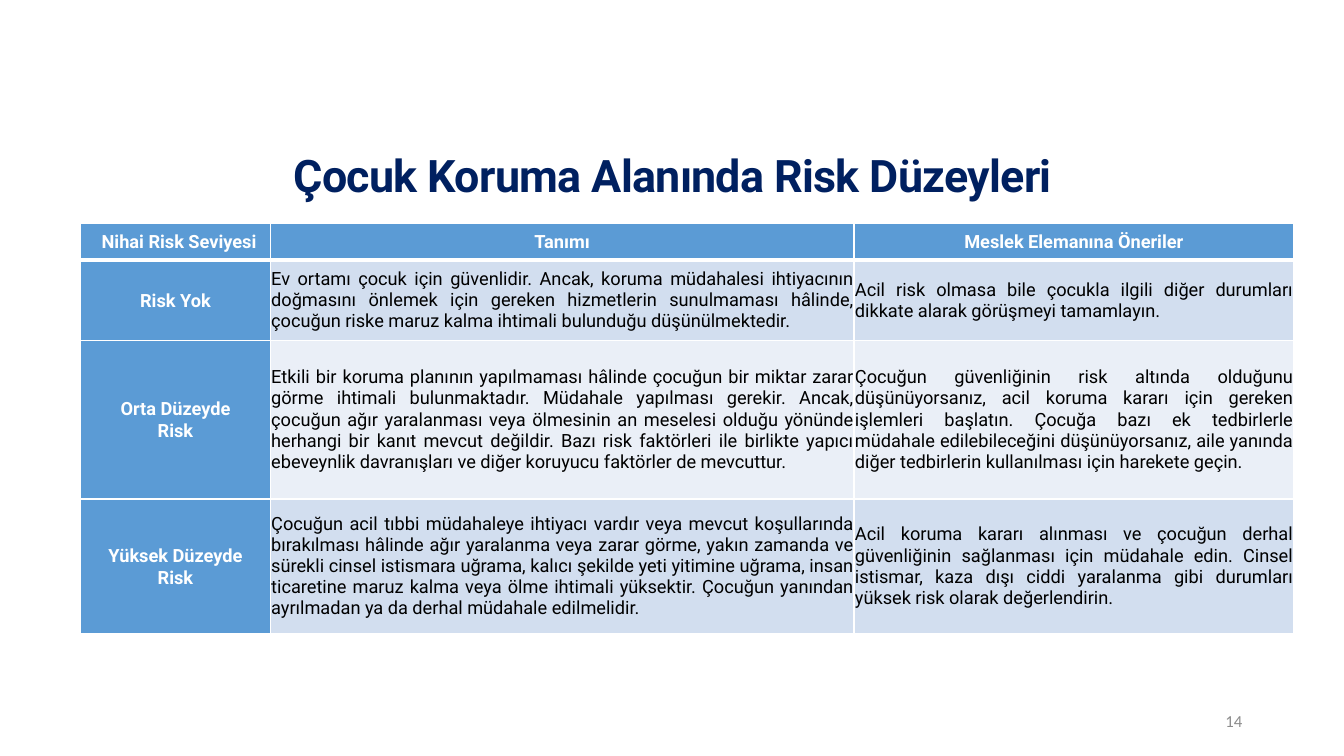
from dataclasses import dataclass
from lxml.etree import SubElement
from pptx import Presentation
from pptx.dml.color import RGBColor
from pptx.enum.text import MSO_ANCHOR, PP_ALIGN
from pptx.oxml.ns import qn
from pptx.util import Inches, Pt

# Content
TITLE = "Çocuk Koruma Alanında Risk Düzeyleri"
PAGE_NUMBER = "14"
HEADERS = ("Nihai Risk Seviyesi", "Tanımı", "Meslek Elemanına Öneriler")
RISK_LEVELS = [
    ("Risk Yok",
     "Ev ortamı çocuk için güvenlidir. Ancak, koruma müdahalesi ihtiyacının doğmasını "
     "önlemek için gereken hizmetlerin sunulmaması hâlinde, çocuğun riske maruz kalma "
     "ihtimali bulunduğu düşünülmektedir.",
     "Acil risk olmasa bile çocukla ilgili diğer durumları dikkate alarak görüşmeyi "
     "tamamlayın."),
    ("Orta Düzeyde\nRisk",
     "Etkili bir koruma planının yapılmaması hâlinde çocuğun bir miktar zarar görme "
     "ihtimali bulunmaktadır. Müdahale yapılması gerekir. Ancak, çocuğun ağır "
     "yaralanması veya ölmesinin an meselesi olduğu yönünde herhangi bir kanıt mevcut "
     "değildir. Bazı risk faktörleri ile birlikte yapıcı ebeveynlik davranışları ve "
     "diğer koruyucu faktörler de mevcuttur.",
     "Çocuğun güvenliğinin risk altında olduğunu düşünüyorsanız, acil koruma kararı "
     "için gereken işlemleri başlatın. Çocuğa bazı ek tedbirlerle müdahale "
     "edilebileceğini düşünüyorsanız, aile yanında diğer tedbirlerin kullanılması için "
     "harekete geçin."),
    ("Yüksek Düzeyde\nRisk",
     "Çocuğun acil tıbbi müdahaleye ihtiyacı vardır veya mevcut koşullarında "
     "bırakılması hâlinde ağır yaralanma veya zarar görme, yakın zamanda ve sürekli "
     "cinsel istismara uğrama, kalıcı şekilde yeti yitimine uğrama, insan ticaretine "
     "maruz kalma veya ölme ihtimali yüksektir. Çocuğun yanından ayrılmadan ya da "
     "derhal müdahale edilmelidir.",
     "Acil koruma kararı alınması ve çocuğun derhal güvenliğinin sağlanması için "
     "müdahale edin. Cinsel istismar, kaza dışı ciddi yaralanma gibi durumları yüksek "
     "risk olarak değerlendirin."),
]
COLUMN_WIDTHS = (1.88, 5.79, 4.36)
ROW_HEIGHTS = (0.36, 0.8, 1.57, 1.34)


@dataclass(frozen=True)
class Theme:
    title: str = "002060"
    label_fill: str = "5B9BD5"
    band_fills: tuple = ("D2DEEF", "EAEFF7")
    white: str = "FFFFFF"
    black: str = "000000"
    grey: str = "8C8C8C"
    font: str = "Roboto"
    number_font: str = "Calibri"
    title_size: int = 32
    table_size: int = 13
    number_size: int = 12


THEME = Theme()


def style(para, font, size, color, bold, align, spacing=None):
    para.alignment = align
    para.line_spacing = spacing
    para.font.name = font
    para.font.size = Pt(size)
    para.font.bold = bold
    para.font.color.rgb = RGBColor.from_string(color)


def place(shape, left, top, width, height):
    shape.left, shape.top = Inches(left), Inches(top)
    shape.width, shape.height = Inches(width), Inches(height)


def add_borders(cell, bottom_width, top_width):
    properties = cell._tc.get_or_add_tcPr()
    for side, width in (("L", 1), ("R", 1), ("T", top_width), ("B", bottom_width)):
        line = SubElement(properties, qn(f"a:ln{side}"), w=str(Pt(width)))
        fill = SubElement(line, qn("a:solidFill"))
        SubElement(fill, qn("a:srgbClr"), val=THEME.white)


def fill_cell(cell, text, row, column):
    is_label = row == 0 or column == 0
    add_borders(cell, 3 if row == 0 else 1, 3 if row == 1 else 1)
    cell.fill.solid()
    color = THEME.label_fill if is_label else THEME.band_fills[(row - 1) % 2]
    cell.fill.fore_color.rgb = RGBColor.from_string(color)
    cell.margin_left = cell.margin_right = Inches(0.01)
    cell.margin_top = cell.margin_bottom = 0
    cell.vertical_anchor = MSO_ANCHOR.MIDDLE
    cell.text = text
    for para in cell.text_frame.paragraphs:
        if is_label:
            style(para, THEME.font, THEME.table_size, THEME.white, True,
                  PP_ALIGN.CENTER, 1.05)
        else:
            style(para, THEME.font, THEME.table_size, THEME.black, False,
                  PP_ALIGN.JUSTIFY)


def main():
    deck = Presentation()
    deck.slide_width, deck.slide_height = Inches(13.33), Inches(7.5)
    page = deck.slides.add_slide(deck.slide_layouts[5])

    # Title
    title = page.shapes.title
    place(title, 0.92, 1.47, 11.5, 0.59)
    title.text_frame.text = TITLE
    title.text_frame.vertical_anchor = MSO_ANCHOR.MIDDLE
    para = title.text_frame.paragraphs[0]
    style(para, THEME.font, THEME.title_size, THEME.title, True, PP_ALIGN.CENTER, 0.9)
    para.runs[0].font._element.set("spc", "-50")

    # Risk table
    rows = [HEADERS, *RISK_LEVELS]
    table = page.shapes.add_table(
        len(rows), len(HEADERS), Inches(0.8), Inches(2.22),
        Inches(sum(COLUMN_WIDTHS)), Inches(sum(ROW_HEIGHTS))).table
    for column, width in zip(table.columns, COLUMN_WIDTHS):
        column.width = Inches(width)
    for row, height in zip(table.rows, ROW_HEIGHTS):
        row.height = Inches(height)
    for row, texts in enumerate(rows):
        for column, text in enumerate(texts):
            fill_cell(table.cell(row, column), text, row, column)
    first_header = table.cell(0, 0).text_frame.paragraphs[0]
    first_header._p.get_or_add_pPr().set("marL", str(Inches(0.07)))

    # Page number
    box = page.shapes.add_textbox(Inches(9.42), Inches(6.95), Inches(3), Inches(0.4))
    box.text_frame.word_wrap = True
    box.text_frame.vertical_anchor = MSO_ANCHOR.MIDDLE
    box.text_frame.text = PAGE_NUMBER
    style(box.text_frame.paragraphs[0], THEME.number_font, THEME.number_size,
          THEME.grey, False, PP_ALIGN.RIGHT)

    deck.save("out.pptx")


if __name__ == "__main__":
    main()
